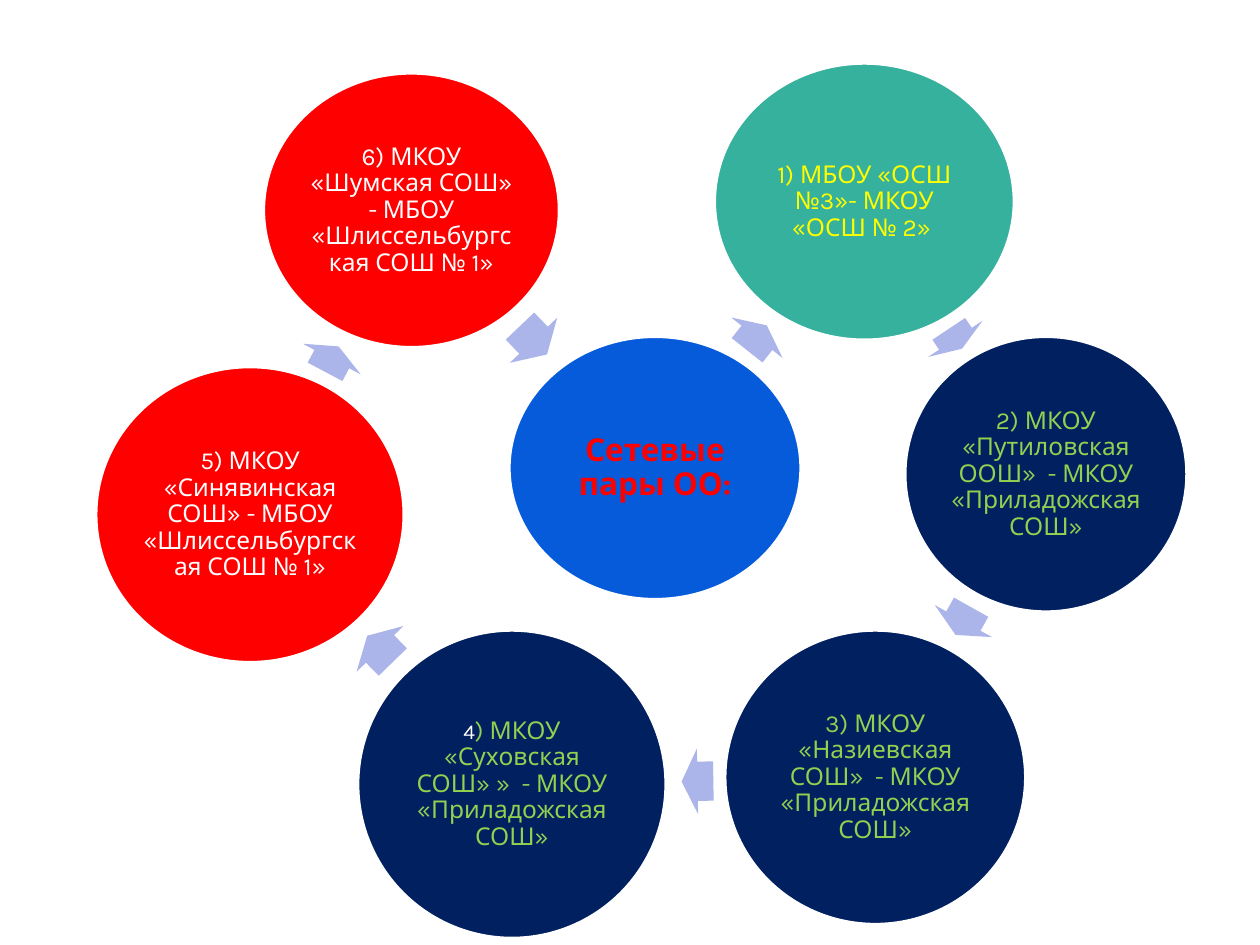
from pptx import Presentation
from pptx.dml.color import RGBColor
from pptx.enum.shapes import MSO_SHAPE
from pptx.enum.text import MSO_ANCHOR, PP_ALIGN
from pptx.util import Cm, Pt

COLORS = {
    "blue": "065BDB", "teal": "35B19D", "navy": "002060", "red": "FF0000",
    "white": "FFFFFF", "yellow": "FFFF00", "green": "92D050", "lilac": "ABB5EA",
}
CENTRE = (10.26, 6.78, 5.89, 5.31)
PAIRS = [
    ((14.4, 1.27, 6.05, 5.59), "teal", [("1) МБОУ «ОСШ №3»- МКОУ «ОСШ № 2» ", 14, "yellow")]),
    ((18.24, 6.78, 5.69, 5.56), "navy",
     [("2) МКОУ «Путиловская ООШ»  - МКОУ «Приладожская СОШ»", 14, "green")]),
    ((14.61, 12.7, 6.07, 5.94), "navy",
     [("3) МКОУ «Назиевская СОШ»  - МКОУ «Приладожская СОШ»", 14, "green")]),
    ((7.21, 12.7, 6.22, 6.22), "navy",
     [("4", 12, "white"), (") МКОУ «Суховская СОШ» »  - МКОУ «Приладожская СОШ»", 14, "green")]),
    ((1.93, 7.39, 6.22, 5.97), "red",
     [("5) МКОУ «Синявинская СОШ» - МБОУ «Шлиссельбургская СОШ № 1»", 14, "white")]),
    ((5.31, 1.47, 5.97, 5.54), "red",
     [("6) МКОУ «Шумская СОШ» - МБОУ «Шлиссельбургская СОШ № 1»", 14, "white")]),
]
ARROWS = [
    (14.94, 6.15, 0.64, 308.3), (19.02, 6.17, 0.48, 56.3), (19.1, 11.86, 0.64, 119.3),
    (13.74, 15.09, 0.64, 179), (7.29, 12.42, 0.74, 225.7), (6.4, 6.58, 0.58, 297.9),
    (10.36, 6.2, 0.79, 46.4),
]


class CycleDiagram:
    """Hold the diagram style and the page being drawn."""

    font_name = "Karla"
    arrow_height = 1.32
    paragraph_format = {"alignment": PP_ALIGN.CENTER, "line_spacing": 0.9}

    def __init__(self, page):
        """Start drawing on the given page."""
        self.page = page

    def shape(self, kind, place, fill):
        """Add a filled preset shape."""
        shape = self.page.shapes.add_shape(kind, *(Cm(length) for length in place))
        shape.shadow.inherit = False
        shape.fill.solid()
        shape.fill.fore_color.rgb = RGBColor.from_string(COLORS[fill])
        return shape

    def circle(self, place, fill, spans, inset=0.05, bold=False):
        """Add a white-edged ellipse with centred text."""
        circle = self.shape(MSO_SHAPE.OVAL, place, fill)
        circle.line.color.rgb = RGBColor.from_string(COLORS["white"])
        circle.line.width = Pt(2)
        frame = circle.text_frame
        frame_format = {"word_wrap": True, "vertical_anchor": MSO_ANCHOR.MIDDLE}
        for side in ("left", "top", "right", "bottom"):
            frame_format[f"margin_{side}"] = Cm(inset)
        for name, value in frame_format.items():
            setattr(frame, name, value)
        para = frame.paragraphs[0]
        for name, value in self.paragraph_format.items():
            setattr(para, name, value)
        for text, size, color in spans:
            span = para.add_run()
            span.text = text
            span_format = {"name": self.font_name, "size": Pt(size), "bold": bold}
            for name, value in span_format.items():
                setattr(span.font, name, value)
            span.font.color.rgb = RGBColor.from_string(COLORS[color])

    def arrow(self, left, top, width, angle):
        """Add a block arrow turned to the given angle."""
        place = (left, top, width, self.arrow_height)
        arrow = self.shape(MSO_SHAPE.RIGHT_ARROW, place, "lilac")
        arrow.adjustments[0] = 0.6
        arrow.adjustments[1] = 0.5
        arrow.line.fill.background()
        arrow.rotation = angle


def main():
    """Build the deck and save it."""
    deck = Presentation()
    deck.slide_width, deck.slide_height = Cm(25.4), Cm(19.05)
    diagram = CycleDiagram(deck.slides.add_slide(deck.slide_layouts[6]))
    diagram.circle(CENTRE, "blue", [("Сетевые пары ОО:", 18, "red")], inset=0.08, bold=True)
    for place, fill, spans in PAIRS:
        diagram.circle(place, fill, spans)
    for arrow in ARROWS:
        diagram.arrow(*arrow)
    deck.save("out.pptx")


if __name__ == "__main__":
    main()
